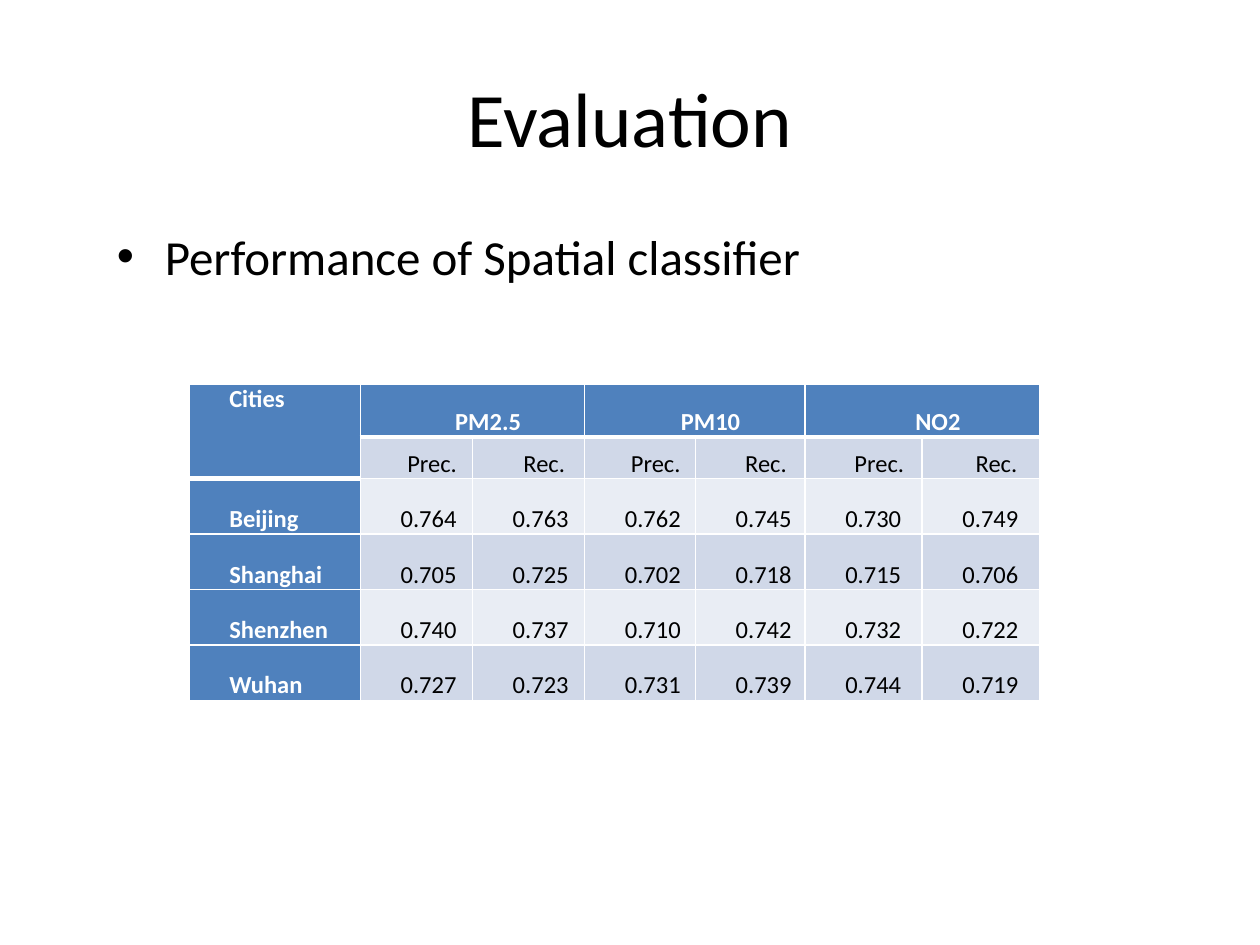
from pptx import Presentation
from pptx.dml.color import RGBColor
from pptx.enum.text import MSO_ANCHOR as Anchor, PP_ALIGN as Align
from pptx.oxml.ns import qn
from pptx.util import Inches, Pt
from lxml.etree import SubElement

FONT = "Calibri"
COLORS = {"black": "000000", "white": "FFFFFF", "head": "4F81BD",
          "dark": "D0D8E8", "light": "E9EDF4"}
COLS = [1.36, 0.89, 0.89, 0.88, 0.87, 0.93, 0.93]
ROWS = [0.42, 0.33] + [0.44] * 4
GASES = ["PM2.5", "PM10", "NO2"]
SCORES = {
    "Beijing": ["0.764", "0.763", "0.762", "0.745", "0.730", "0.749"],
    "Shanghai": ["0.705", "0.725", "0.702", "0.718", "0.715", "0.706"],
    "Shenzhen": ["0.740", "0.737", "0.710", "0.742", "0.732", "0.722"],
    "Wuhan": ["0.727", "0.723", "0.731", "0.739", "0.744", "0.719"],
}


def rgb(name):
    return RGBColor.from_string(COLORS[name])


def add_run(para, text, size, color="black", bold=False):
    run = para.add_run()
    run.text = text
    font = run.font
    font.name, font.size, font.bold = FONT, Pt(size), bold
    font.color.rgb = rgb(color)


def set_indent(para, left, first):
    props = para._p.get_or_add_pPr()
    props.set("marL", str(Inches(left)))
    props.set("indent", str(Inches(first)))
    return props


def add_title(slide, text):
    title = slide.shapes.title
    title.left, title.top = Inches(0.5), Inches(0.3)
    title.width, title.height = Inches(9), Inches(1.25)
    frame = title.text_frame
    frame.vertical_anchor = Anchor.MIDDLE
    para = frame.paragraphs[0]
    para.alignment = Align.CENTER
    add_run(para, text, 44)


def add_bullet(slide, text):
    box = slide.shapes.add_textbox(Inches(0.83), Inches(1.75),
                                   Inches(8.25), Inches(3.83))
    frame = box.text_frame
    frame.word_wrap = True
    para = frame.paragraphs[0]
    para.space_before = Pt(5.6)
    props = set_indent(para, 0.38, -0.38)
    SubElement(props, qn("a:buFont"), typeface="Arial")
    SubElement(props, qn("a:buChar"), char="•")
    add_run(para, text, 28)


def set_edges(cell, row, col):
    # A thick rule closes the header, which is two rows deep in the first column
    rule = 2 if col == 0 else 1
    widths = {"L": 1, "R": 1, "T": 3 if row == rule else 1,
              "B": 3 if row + 1 == rule else 1}
    props = cell._tc.get_or_add_tcPr()
    for side, width in widths.items():
        line = SubElement(props, qn(f"a:ln{side}"), w=str(Pt(width)))
        fill = SubElement(line, qn("a:solidFill"))
        SubElement(fill, qn("a:srgbClr"), val=COLORS["white"])


def fill_cell(cell, row, col, text):
    head = row == 0 or col == 0
    set_edges(cell, row, col)
    cell.fill.solid()
    cell.fill.fore_color.rgb = rgb("head" if head else
                                   "dark" if row % 2 else "light")
    cell.margin_left = cell.margin_right = Inches(0.07)
    cell.margin_top = cell.margin_bottom = 0
    cell.vertical_anchor = Anchor.TOP if row == col == 0 else Anchor.BOTTOM
    para = cell.text_frame.paragraphs[0]
    para.alignment = Align.JUSTIFY if col == 0 or row > 1 else Align.CENTER
    para.space_after = Pt(4)
    set_indent(para, 0, 0.25)
    if text:
        add_run(para, text, 14, "white" if head else "black", head)


def add_scores(slide):
    grid = [["Cities "], [""] + ["Prec.", "Rec."] * len(GASES)]
    for gas in GASES:
        grid[0] += [gas, ""]
    for city, vals in SCORES.items():
        grid.append([city] + [val + " " for val in vals])

    table = slide.shapes.add_table(len(ROWS), len(COLS), Inches(1.5), Inches(3.05),
                                   Inches(sum(COLS)), Inches(sum(ROWS))).table
    for col, width in zip(table.columns, COLS):
        col.width = Inches(width)
    for row, height in zip(table.rows, ROWS):
        row.height = Inches(height)
    for r, texts in enumerate(grid):
        for c, text in enumerate(texts):
            fill_cell(table.cell(r, c), r, c, text)

    # Merged headings
    table.cell(0, 0).merge(table.cell(1, 0))
    for c in range(1, len(COLS), 2):
        table.cell(0, c).merge(table.cell(0, c + 1))


def main():
    deck = Presentation()
    deck.slide_width, deck.slide_height = Inches(10), Inches(7.5)
    slide = deck.slides.add_slide(deck.slide_layouts[5])
    add_title(slide, "Evaluation")
    add_scores(slide)
    add_bullet(slide, "Performance of Spatial classifier")
    deck.save("out.pptx")


if __name__ == "__main__":
    main()
